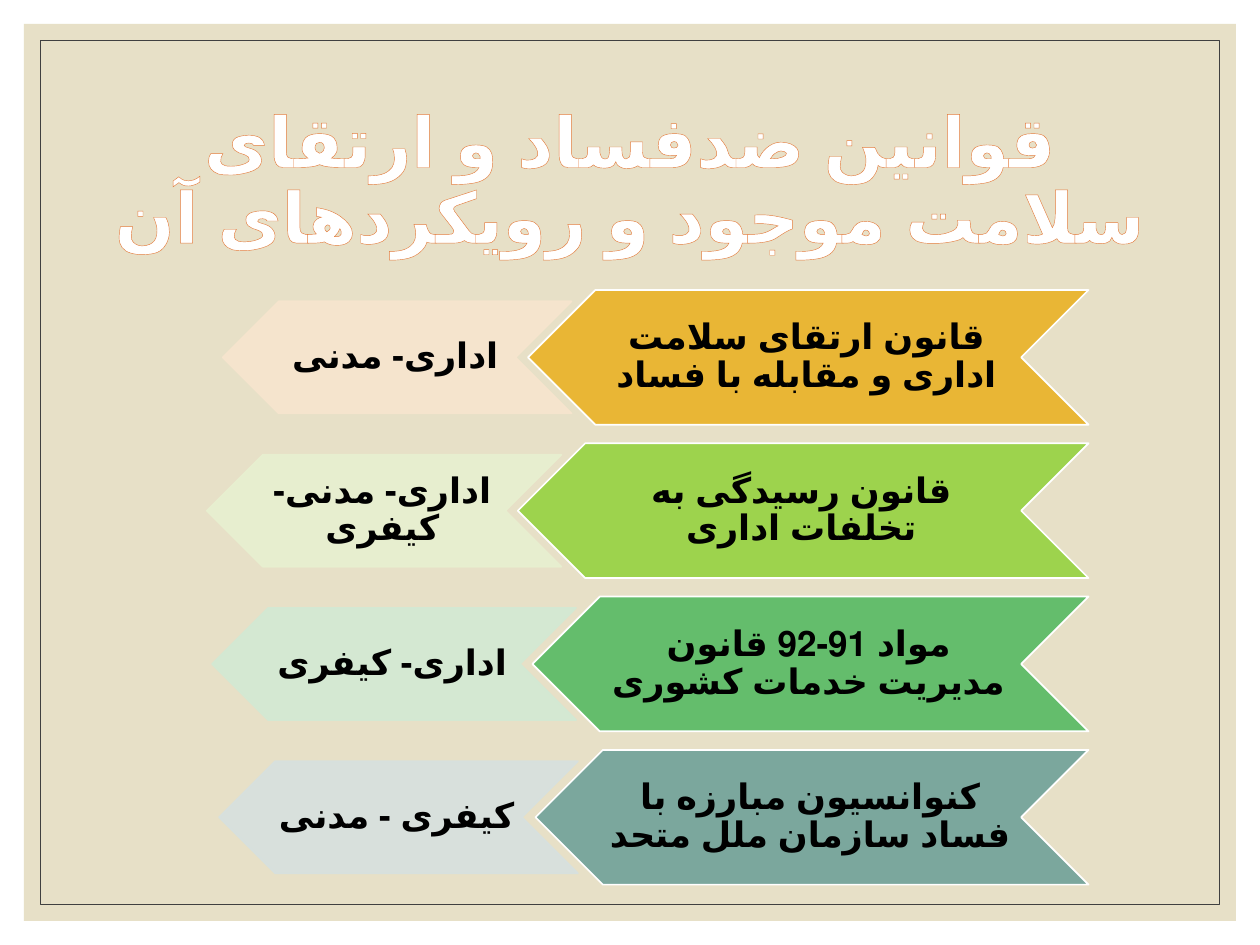
import pptx
import pptx.dml.color
import pptx.enum.lang
import pptx.enum.shapes
import pptx.enum.text
import pptx.oxml
import pptx.oxml.ns
import pptx.util

Pt = pptx.util.Pt
SHAPES = pptx.enum.shapes.MSO_SHAPE
NAMESPACE = pptx.oxml.ns.nsdecls("a")

LAW_RIGHT = 622
LAW_HEIGHT = 77
APPROACH_HEIGHT = 64
FIRST_MIDDLE = 204.2
ROW_PITCH = 87.6

# law, law left, law fill, approach, approach left, approach width, approach fill
ROWS = [
    ("قانون ارتقای سلامت اداری و مقابله با فساد", 301.7, "E9B635",
     "اداری- مدنی", 127.2, 199.4, "F7E5CE"),
    ("قانون رسیدگی به تخلفات اداری", 295.9, "9DD34D",
     "اداری- مدنی- کیفری", 118.2, 202.6, "E7F0D0"),
    ("مواد 91-92 قانون مدیریت خدمات کشوری", 304.2, "64BD6C",
     "اداری- کیفری", 121.2, 208, "D3E9D4"),
    ("کنوانسیون مبارزه با فساد سازمان ملل متحد", 306, "7BA79D",
     "کیفری - مدنی", 125.2, 205, "D7E1DF"),
]


def color(value):
    return pptx.dml.color.RGBColor.from_string(value)


def add_alpha(fill, percent):
    """Make a solid fill partly transparent."""
    tag = pptx.oxml.parse_xml(f'<a:alpha {NAMESPACE} val="{percent * 1000}"/>')
    fill._xPr.find(".//" + pptx.oxml.ns.qn("a:srgbClr")).append(tag)


class SlideWriter:
    font = "Times New Roman"
    language = pptx.enum.lang.MSO_LANGUAGE_ID.FARSI

    def __init__(self, slide):
        self.slide = slide

    def shape(self, kind, left, top, width, height, fill=None, line=None,
              line_width=1, opacity=100):
        shape = self.slide.shapes.add_shape(
            kind, Pt(left), Pt(top), Pt(width), Pt(height))
        shape.shadow.inherit = False
        if fill:
            shape.fill.solid()
            shape.fill.fore_color.rgb = color(fill)
        else:
            shape.fill.background()
        if line:
            shape.line.color.rgb = color(line)
            shape.line.width = Pt(line_width)
        else:
            shape.line.fill.background()
        if opacity < 100:
            add_alpha(shape.fill, opacity)
            if line:
                add_alpha(shape.line.fill, opacity)
        return shape

    def text(self, words, left, top, width, height, size=20, ink="000000",
             insets=(0, 0.7, 2.2, 0.7), outline=None):
        box = self.slide.shapes.add_textbox(
            Pt(left), Pt(top), Pt(width), Pt(height))
        frame = box.text_frame
        frame.word_wrap = True
        frame.vertical_anchor = pptx.enum.text.MSO_ANCHOR.MIDDLE
        (frame.margin_left, frame.margin_top,
         frame.margin_right, frame.margin_bottom) = map(Pt, insets)
        para = frame.paragraphs[0]
        para.alignment = pptx.enum.text.PP_ALIGN.CENTER
        para.line_spacing = 0.9
        para._p.get_or_add_pPr().set("rtl", "1")
        span = para.add_run()
        span.text = words
        span.font.name = self.font
        span.font.language_id = self.language
        span.font.size = Pt(size)
        span.font.bold = True
        span.font.color.rgb = color(ink)
        if outline:
            line = pptx.oxml.parse_xml(
                f'<a:ln {NAMESPACE} w="{Pt(0.52)}"><a:solidFill>'
                f'<a:srgbClr val="{outline}"/></a:solidFill></a:ln>')
            span.font._element.insert(0, line)

    def arrow(self, words, left, middle, width, height, fill, line, opacity=100):
        """Draw a left-pointing chevron with upright text between its points."""
        top = middle - height / 2
        chevron = self.shape(SHAPES.CHEVRON, left, top, width, height,
                             fill, line, opacity=opacity)
        chevron.rotation = 180
        self.text(words, left + height / 2, top, width - height, height)


def main():
    deck = pptx.Presentation()
    deck.slide_width, deck.slide_height = Pt(720), Pt(540)
    page = SlideWriter(deck.slides.add_slide(deck.slide_layouts[6]))

    page.shape(SHAPES.RECTANGLE, 13.7, 13.7, 692.6, 512.6, fill="E7E0C7")
    page.shape(SHAPES.RECTANGLE, 23, 23, 674, 494, line="404040", line_width=0.5)
    page.text("قوانین ضدفساد و ارتقای سلامت موجود و رویکردهای آن",
              57.6, 50.4, 604.8, 108, size=40, ink="FFFFFF",
              insets=(7.2, 3.6, 7.2, 3.6), outline="E37C3D")

    for index, row in enumerate(ROWS):
        law, law_left, law_fill, approach, left, width, fill = row
        middle = FIRST_MIDDLE + index * ROW_PITCH
        page.arrow(law, law_left, middle, LAW_RIGHT - law_left, LAW_HEIGHT,
                   law_fill, "FFFFFF")
        page.arrow(approach, left, middle, width, APPROACH_HEIGHT,
                   fill, fill, opacity=90)

    deck.save("out.pptx")


if __name__ == "__main__":
    main()
